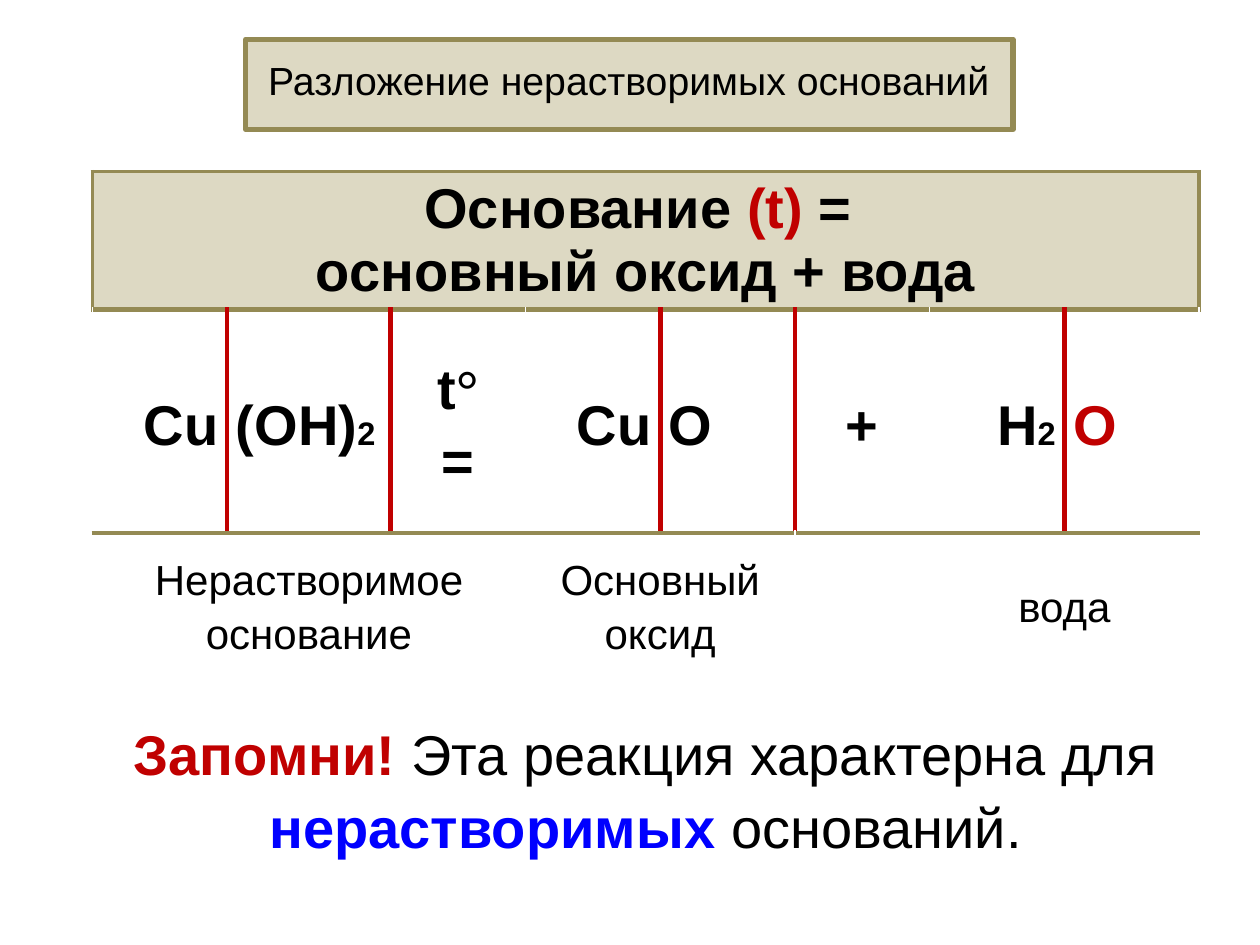
"""Build a slide on the thermal decomposition of insoluble bases."""
from lxml import etree
from pptx import Presentation
from pptx.dml.color import RGBColor
from pptx.enum.text import MSO_ANCHOR, MSO_AUTO_SIZE, PP_ALIGN
from pptx.oxml.ns import qn
from pptx.util import Pt

LEFT, CENTER, RIGHT = PP_ALIGN.LEFT, PP_ALIGN.CENTER, PP_ALIGN.RIGHT
MIDDLE, TOP = MSO_ANCHOR.MIDDLE, MSO_ANCHOR.TOP
NO_AUTOFIT = MSO_AUTO_SIZE.NONE
C = {"black": "000000", "red": "C00000", "blue": "0000FF",
     "sand": "DDD9C3", "olive": "948A54"}


def add_run(p, text, size=32, bold=False, color="black", font="Arial", baseline=None):
    r = p.add_run()
    r.text = text
    r.font.size, r.font.bold, r.font.name = Pt(size), bold, font
    r.font.color.rgb = RGBColor.from_string(C[color])
    if baseline is not None:
        r._r.get_or_add_rPr().set("baseline", str(baseline))


def add_borders(cell, **sides):
    tc_pr = cell._tc.get_or_add_tcPr()
    used = [side for side in "LRTB" if side in sides]
    for i, side in enumerate(used):
        color, width = sides[side]
        ln = etree.Element(qn(f"a:ln{side}"), w=str(Pt(width)))
        fill = etree.SubElement(ln, qn("a:solidFill"))
        etree.SubElement(fill, qn("a:srgbClr"), val=C[color])
        tc_pr.insert(i, ln)


prs = Presentation()
prs.slide_width, prs.slide_height = Pt(720), Pt(540)
s = prs.slides.add_slide(prs.slide_layouts[5])

title = s.shapes.title
title.left, title.top, title.width, title.height = Pt(140.4), Pt(22.5), Pt(438.5), Pt(51.5)
title.fill.solid()
title.fill.fore_color.rgb = RGBColor.from_string(C["sand"])
title.line.color.rgb = RGBColor.from_string(C["olive"])
title.line.width = Pt(3)
tf = title.text_frame
tf.auto_size, tf.word_wrap, tf.vertical_anchor = NO_AUTOFIT, True, MIDDLE
p = tf.paragraphs[0]
p.alignment, p.line_spacing = CENTER, 0.8
add_run(p, "Разложение нерастворимых оснований", size=22.4)

widths = [77, 93.5] + [77] * 6
heights = [78.5, 127.5, 82, 127.5]
table = s.shapes.add_table(len(heights), len(widths), Pt(52.8), Pt(98),
                           Pt(sum(widths)), Pt(sum(heights))).table
table.first_row = table.horz_banding = False
for col, width in zip(table.columns, widths):
    col.width = Pt(width)
for row, height in zip(table.rows, heights):
    row.height = Pt(height)
for cell in table.iter_cells():
    cell.fill.background()

bold = {"bold": True}
bold_red = {"bold": True, "color": "red"}
bold_blue = {"bold": True, "color": "blue"}
sub = {"bold": True, "baseline": -25}
degree = {"bold": True, "font": "Times New Roman"}
label = {"size": 24}

contents = [
    (0, 0, 8, CENTER, [[("Основание ", bold), ("(t) ", bold_red), ("= ", bold)],
                       [("основный оксид + вода", bold)]]),
    (1, 0, 1, RIGHT, [[("Cu", bold)]]),
    (1, 1, 1, LEFT, [[("(OH)", bold), ("2", sub)]]),
    (1, 2, 1, CENTER, [[("t", bold), ("°", degree)], [("=", bold)]]),
    (1, 3, 1, RIGHT, [[("Cu", bold)]]),
    (1, 4, 1, LEFT, [[("O", bold)]]),
    (1, 5, 1, CENTER, [[("+", bold)]]),
    (1, 6, 1, RIGHT, [[("H", bold), ("2", sub)]]),
    (1, 7, 1, LEFT, [[("O", bold_red)]]),
    (2, 0, 3, CENTER, [[("Нерастворимое основание", label)]]),
    (2, 3, 2, CENTER, [[("Основный оксид", label)]]),
    (2, 6, 2, CENTER, [[("вода", label)]]),
    (3, 0, 8, CENTER, [[("Запомни! ", bold_red), ("Эта реакция характерна для ", {}),
                        ("нерастворимых", bold_blue), (" оснований.", {})]]),
]
for row, col, span, align, paragraphs in contents:
    cell = table.cell(row, col)
    if span > 1:
        cell.merge(table.cell(row, col + span - 1))
    cell.vertical_anchor = MIDDLE if row else TOP
    if row:
        cell.margin_left = cell.margin_right = Pt(5)
        cell.margin_top = cell.margin_bottom = Pt(0)
    tf = cell.text_frame
    for i, runs in enumerate(paragraphs):
        p = tf.add_paragraph() if i else tf.paragraphs[0]
        p.alignment, p.line_spacing = align, 1.15 if row else 1.0
        for text, fmt in runs:
            add_run(p, text, **fmt)

header = table.cell(0, 0)
header.fill.solid()
header.fill.fore_color.rgb = RGBColor.from_string(C["sand"])
thin, thick, divider = ("olive", 2.25), ("olive", 3), ("red", 3)
add_borders(header, L=thin, R=thin, T=thin, B=thick)
for col in range(len(widths)):
    sides = {"T": thick}
    if col in (0, 3, 6):
        sides["R"] = divider
    if col in (1, 4, 7):
        sides["L"] = divider
    add_borders(table.cell(1, col), **sides)

prs.save("out.pptx")
